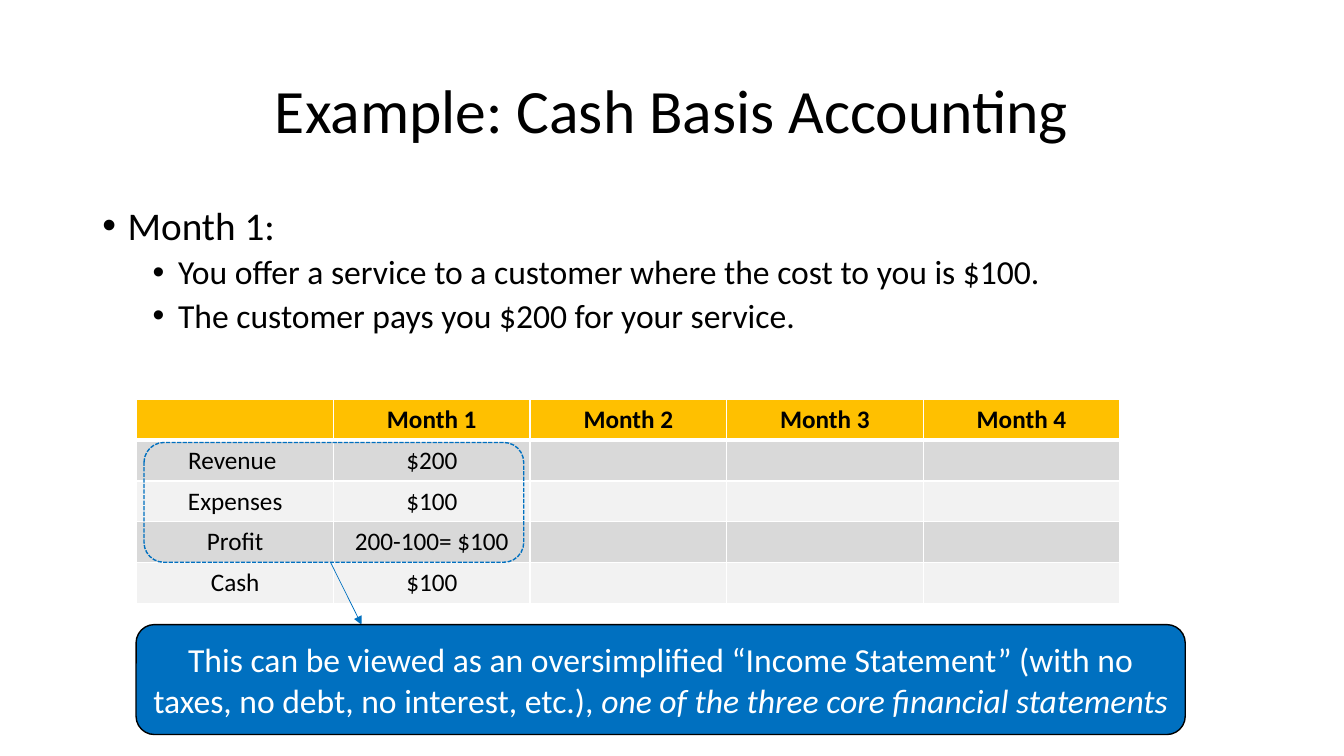
from lxml.etree import SubElement
from pptx import Presentation
from pptx.dml.color import RGBColor
from pptx.enum.dml import MSO_LINE
from pptx.enum.shapes import MSO_CONNECTOR, MSO_SHAPE
from pptx.enum.text import MSO_ANCHOR, PP_ALIGN
from pptx.oxml import parse_xml
from pptx.oxml.ns import nsdecls, qn
from pptx.util import Cm, Pt

TITLE = "Example: Cash Basis Accounting"
BULLETS = [
    (0, "Month 1:"),
    (1, "You offer a service to a customer where the cost to you is $100."),
    (1, "The customer pays you $200 for your service."),
]
LEVELS = [
    {"size": 28, "before": 10, "indent": 0.64},
    {"size": 24, "before": 5, "indent": 1.91},
]
STATEMENT = [
    ["", "Month 1", "Month 2", "Month 3", "Month 4"],
    ["Revenue ", "$200", "", "", ""],
    ["Expenses", "$100", "", "", ""],
    ["Profit", "200-100= $100", "", "", ""],
    ["Cash", "$100", "", "", ""],
]
REVEAL_ORDER = ["Expenses", "Revenue ", "Profit", "Cash"]
CALLOUT = "This can be viewed as an oversimplified “Income Statement” (with no taxes, no debt, no interest, etc.), "
CALLOUT_END = "one of the three core financial statements"

BLACK = RGBColor(0, 0, 0)
WHITE = RGBColor(255, 255, 255)
GOLD = RGBColor(255, 192, 0)
BLUE = RGBColor(0, 112, 192)
BANDS = [RGBColor(242, 242, 242), RGBColor(217, 217, 217)]

TITLE_BOX = (2.33, 1.02, 29.21, 3.68)
BODY_BOX = (2.33, 5.08, 29.21, 12.09)
TABLE_BOX = (3.45, 10.06, 24.77, 5.15)
FRAME_BOX = (3.63, 11.15, 9.57, 3.02)
CALLOUT_BOX = (3.43, 15.74, 26.44, 2.77)
ARROW_START, ARROW_END = (8.33, 14.17), (9.11, 15.74)
HANGING = 0.64


def lengths(*values):
    """Turn centimetres into lengths."""
    return [Cm(value) for value in values]


def write(para, text, size=18, color=BLACK, bold=False, italic=False, align=PP_ALIGN.CENTER):
    """Add a formatted span of text to a paragraph."""
    para.alignment = align
    span = para.add_run()
    span.text = text
    font = span.font
    font.name, font.size, font.color.rgb = "Calibri", Pt(size), color
    font.bold, font.italic = bold, italic


def add_bullet(para, indent):
    """Give a paragraph a hanging round bullet."""
    props = para._p.get_or_add_pPr()
    props.set("marL", str(Cm(indent)))
    props.set("indent", str(-Cm(HANGING)))
    SubElement(props, qn("a:buFont"), typeface="Arial")
    SubElement(props, qn("a:buChar"), char="•")


def add_borders(cell, bottom):
    """Draw white borders round a table cell."""
    props = cell._tc.get_or_add_tcPr()
    sides = [("lnL", 1), ("lnR", 1), ("lnT", 1), ("lnB", bottom)]
    for place, (side, width) in enumerate(sides):
        props.insert(place, parse_xml(
            f'<a:{side} {nsdecls("a")} w="{Pt(width)}"><a:solidFill>'
            f'<a:srgbClr val="{WHITE}"/></a:solidFill></a:{side}>'))


def add_rounded(page, box, line):
    """Add a rounded rectangle with a one-point outline."""
    shape = page.shapes.add_shape(MSO_SHAPE.ROUNDED_RECTANGLE, *lengths(*box))
    shape.shadow.inherit = False
    shape.line.color.rgb, shape.line.width = line, Pt(1)
    return shape


def add_title(page):
    """Place and fill the title."""
    title = page.shapes.title
    title.left, title.top, title.width, title.height = lengths(*TITLE_BOX)
    title.text_frame.vertical_anchor = MSO_ANCHOR.MIDDLE
    para = title.text_frame.paragraphs[0]
    para.line_spacing = 0.9
    write(para, TITLE, size=44)


def add_body(page):
    """Add the bulleted text."""
    frame = page.shapes.add_textbox(*lengths(*BODY_BOX)).text_frame
    frame.word_wrap = True
    for number, (level, text) in enumerate(BULLETS):
        para = frame.add_paragraph() if number else frame.paragraphs[0]
        style = LEVELS[level]
        para.level, para.line_spacing = level, 0.9
        para.space_before = Pt(style["before"])
        write(para, text, size=style["size"], align=PP_ALIGN.LEFT)
        add_bullet(para, style["indent"])


def add_statement(page, pending):
    """Add one build step of the monthly table, with pending values blended into their band."""
    table = page.shapes.add_table(
        len(STATEMENT), len(STATEMENT[0]), *lengths(*TABLE_BOX)).table
    for r, texts in enumerate(STATEMENT):
        band = BANDS[r % 2] if r else GOLD
        for c, text in enumerate(texts):
            cell = table.cell(r, c)
            cell.fill.solid()
            cell.fill.fore_color.rgb = band
            add_borders(cell, bottom=1 if r else 3)
            if text:
                color = band if c and texts[0] in pending else BLACK
                write(cell.text_frame.paragraphs[0], text, color=color, bold=r == 0)


def add_arrow(page):
    """Add the arrow from the dashed frame to the callout."""
    arrow = page.shapes.add_connector(
        MSO_CONNECTOR.STRAIGHT, *lengths(*ARROW_START, *ARROW_END))
    arrow.line.color.rgb, arrow.line.width = BLUE, Pt(0.5)
    SubElement(arrow.line._get_or_add_ln(), qn("a:tailEnd"), type="triangle")
    SubElement(arrow._element.spPr, qn("a:effectLst"))


def add_callout(page):
    """Add the blue note below the table."""
    callout = add_rounded(page, CALLOUT_BOX, BLACK)
    callout.fill.solid()
    callout.fill.fore_color.rgb = BLUE
    frame = callout.text_frame
    frame.word_wrap, frame.vertical_anchor = True, MSO_ANCHOR.MIDDLE
    para = frame.paragraphs[0]
    write(para, CALLOUT, size=24, color=WHITE)
    write(para, CALLOUT_END, size=24, color=WHITE, italic=True)


def main():
    """Build the slide and save it."""
    deck = Presentation()
    deck.slide_width, deck.slide_height = lengths(33.87, 19.05)
    page = deck.slides.add_slide(deck.slide_layouts[5])
    add_title(page)
    add_body(page)
    for step in range(len(REVEAL_ORDER) + 1):
        add_statement(page, pending=REVEAL_ORDER[step:])
    frame = add_rounded(page, FRAME_BOX, BLUE)
    frame.fill.background()
    frame.line.dash_style = MSO_LINE.SQUARE_DOT
    add_arrow(page)
    add_callout(page)
    deck.save("out.pptx")


if __name__ == "__main__":
    main()
